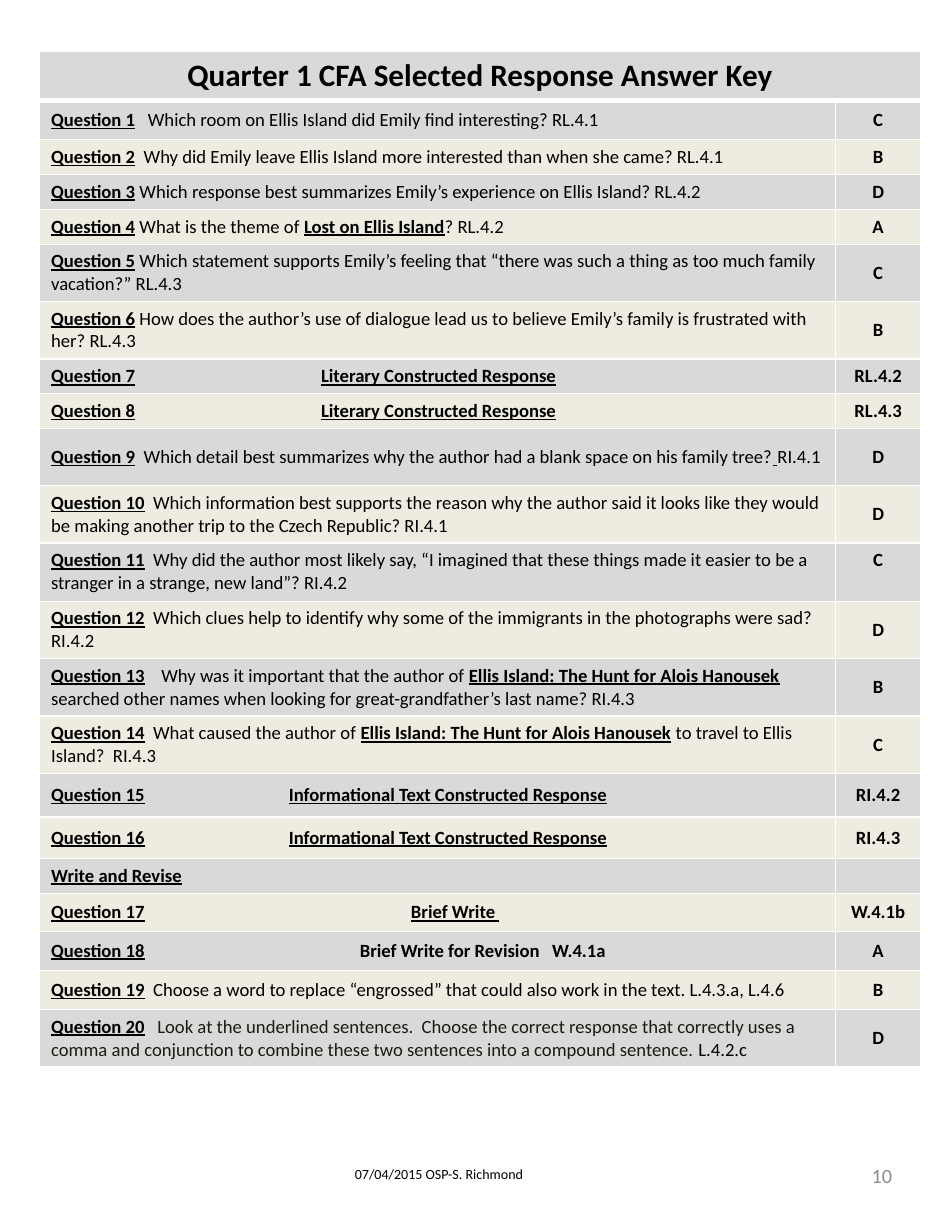
from dataclasses import dataclass

from lxml import etree
from pptx import Presentation
from pptx import util as u
from pptx.dml import color
from pptx.enum import text
from pptx.oxml import ns


@dataclass(frozen=True)
class Theme:
    font: str = "Calibri"
    ink: str = "000000"
    soft_ink: str = "1D1B11"
    page_ink: str = "8C8C8C"
    gray: str = "D9D9D9"
    cream: str = "EEECE1"
    rule: str = "FFFFFF"
    heading_size: int = 20
    body_size: int = 12
    page_size: int = 13
    footer_size: int = 9


theme = Theme()


def add_run(paragraph, words, size, ink=theme.ink, bold=False, underline=False):
    run = paragraph.add_run()
    run.text = words
    run.font.name = theme.font
    run.font.size = u.Pt(size)
    run.font.bold = bold
    run.font.underline = underline
    run.font.color.rgb = color.RGBColor.from_string(ink)


def dress_cell(cell, fill, bottom_width=1):
    cell.margin_left = cell.margin_right = u.Cm(0.27)
    cell.margin_top = cell.margin_bottom = u.Cm(0.13)
    cell.vertical_anchor = text.MSO_ANCHOR.MIDDLE
    for side in "LRTB":
        width = bottom_width if side == "B" else 1
        edge = etree.SubElement(cell._tc.get_or_add_tcPr(), ns.qn(f"a:ln{side}"), w=str(u.Pt(width)))
        solid = etree.SubElement(edge, ns.qn("a:solidFill"))
        etree.SubElement(solid, ns.qn("a:srgbClr"), val=theme.rule)
    cell.fill.solid()
    cell.fill.fore_color.rgb = color.RGBColor.from_string(fill)


# Segments split by "|" alternate between underlined bold and plain.
answer_key = [
    (0.89, 0, "Question 1|   Which room on Ellis Island did Emily find interesting? RL.4.1", "C"),
    (0.79, 0, "Question 2|  Why did Emily leave Ellis Island more interested than when she came? RL.4.1", "B"),
    (0.79, 0, "Question 3| Which response best summarizes Emily’s experience on Ellis Island? RL.4.2", "D"),
    (0.79, 0, "Question 4| What is the theme of |Lost on Ellis Island|? RL.4.2", "A"),
    (1.3, 0, "Question 5| Which statement supports Emily’s feeling that “there was such a thing "
             "as too much family vacation?” RL.4.3", "C"),
    (1.3, 0, "Question 6| How does the author’s use of dialogue lead us to believe Emily’s family "
             "is frustrated with her? RL.4.3", "B"),
    (0.79, 6.12, "Question 7|\t|Literary Constructed Response", "RL.4.2"),
    (0.79, 6.12, "Question 8|\t|Literary Constructed Response", "RL.4.3"),
    (1.3, 0, "Question 9|  Which detail best summarizes why the author had a blank space on his "
             "family tree?| |RI.4.1", "D"),
    (1.3, 0, "Question 10|  Which information best supports the reason why the author said it looks "
             "like they would be making another trip to the Czech Republic? RI.4.1", "D"),
    (1.32, 0, "Question 11|  Why did the author most likely say, “I imagined that these things made "
              "it easier to be a stranger in a strange, new land”? RI.4.2", "C"),
    (1.3, 0, "Question 12|  Which clues help to identify why some of the immigrants in the "
             "photographs were sad? RI.4.2", "D"),
    (1.3, 2.5, "Question 13|\t||Why was it important that the author of |Ellis Island: The Hunt for "
               "Alois Hanousek |searched other names when looking for great-grandfather’s last name? "
               "RI.4.3", "B"),
    (1.3, 0, "Question 14|  What caused the author of |Ellis Island: The Hunt for Alois Hanousek"
             "| to travel to Ellis Island?  RI.4.3", "C"),
    (0.99, 5.39, "Question 15|\t|Informational Text Constructed Response", "RI.4.2"),
    (0.94, 5.39, "Question 16|\t|Informational Text Constructed Response", "RI.4.3"),
    (0.79, 0, "Write and Revise", ""),
    (0.86, 8.16, "Question 17|\t|Brief Write ", "W.4.1b"),
    (0.89, 7, "Question 18|\tBrief Write for Revision   W.4.1a", "A"),
    (0.89, 0, "Question 19|  Choose a word to replace “engrossed” that could also work in the text. "
              "L.4.3.a, L.4.6", "B"),
    (1.3, 0, "Question 20|   Look at the underlined sentences.  Choose the correct response that "
             "correctly uses a comma and conjunction to combine these two sentences into a compound "
             "sentence. ||L.4.2.c", "D"),
]
heading_height = 1.09

deck = Presentation()
deck.slide_width, deck.slide_height = u.Cm(21.59), u.Cm(27.94)
slide = deck.slides.add_slide(deck.slide_layouts[6])

footer = slide.shapes.add_textbox(u.Cm(7.8), u.Cm(26.31), u.Cm(6.83), u.Cm(1.5)).text_frame
footer.word_wrap = True
add_run(footer.paragraphs[0], "07/04/2015 OSP-S. Richmond", theme.footer_size)

page_number = slide.shapes.add_textbox(u.Cm(15.47), u.Cm(25.91), u.Cm(5.03), u.Cm(1.5)).text_frame
page_number.word_wrap = True
page_number.vertical_anchor = text.MSO_ANCHOR.MIDDLE
page_number.margin_left = page_number.margin_right = u.Cm(0.27)
page_number.paragraphs[0].alignment = text.PP_ALIGN.RIGHT
add_run(page_number.paragraphs[0], "10", theme.page_size, theme.page_ink)

total_height = heading_height + sum(entry[0] for entry in answer_key)
key = slide.shapes.add_table(
    len(answer_key) + 1, 2, u.Cm(0.89), u.Cm(1.17), u.Cm(19.99), u.Cm(total_height)
).table
key.first_row = key.horz_banding = False
key.columns[0].width, key.columns[1].width = u.Cm(18.06), u.Cm(1.93)

key.rows[0].height = u.Cm(heading_height)
heading = key.cell(0, 0)
heading.merge(key.cell(0, 1))
for column in range(2):
    dress_cell(key.cell(0, column), theme.gray, bottom_width=3)
heading_line = heading.text_frame.paragraphs[0]
heading_line.alignment = text.PP_ALIGN.CENTER
add_run(heading_line, "Quarter 1 CFA Selected Response Answer Key", theme.heading_size, bold=True)

for row, (height, tab, question, answer) in enumerate(answer_key, start=1):
    key.rows[row].height = u.Cm(height)
    question_cell, answer_cell = key.cell(row, 0), key.cell(row, 1)
    for cell in (question_cell, answer_cell):
        dress_cell(cell, theme.gray if row % 2 else theme.cream)
        if question.startswith("Question 11|"):
            cell.vertical_anchor = text.MSO_ANCHOR.TOP

    question_line = question_cell.text_frame.paragraphs[0]
    if tab:
        tabs = etree.SubElement(question_line._p.get_or_add_pPr(), ns.qn("a:tabLst"))
        etree.SubElement(tabs, ns.qn("a:tab"), pos=str(u.Cm(tab)), algn="l")
    for position, segment in enumerate(question.split("|")):
        if segment:
            marked = position % 2 == 0
            ink = theme.soft_ink if segment.startswith("   Look") else theme.ink
            add_run(question_line, segment, theme.body_size, ink,
                    bold=marked or segment.startswith("\t"), underline=marked)

    answer_line = answer_cell.text_frame.paragraphs[0]
    answer_line.alignment = text.PP_ALIGN.CENTER
    if answer:
        add_run(answer_line, answer, theme.body_size, bold=True)
    else:
        etree.SubElement(answer_line._p, ns.qn("a:endParaRPr"), sz=str(theme.body_size * 100))

deck.save("out.pptx")
